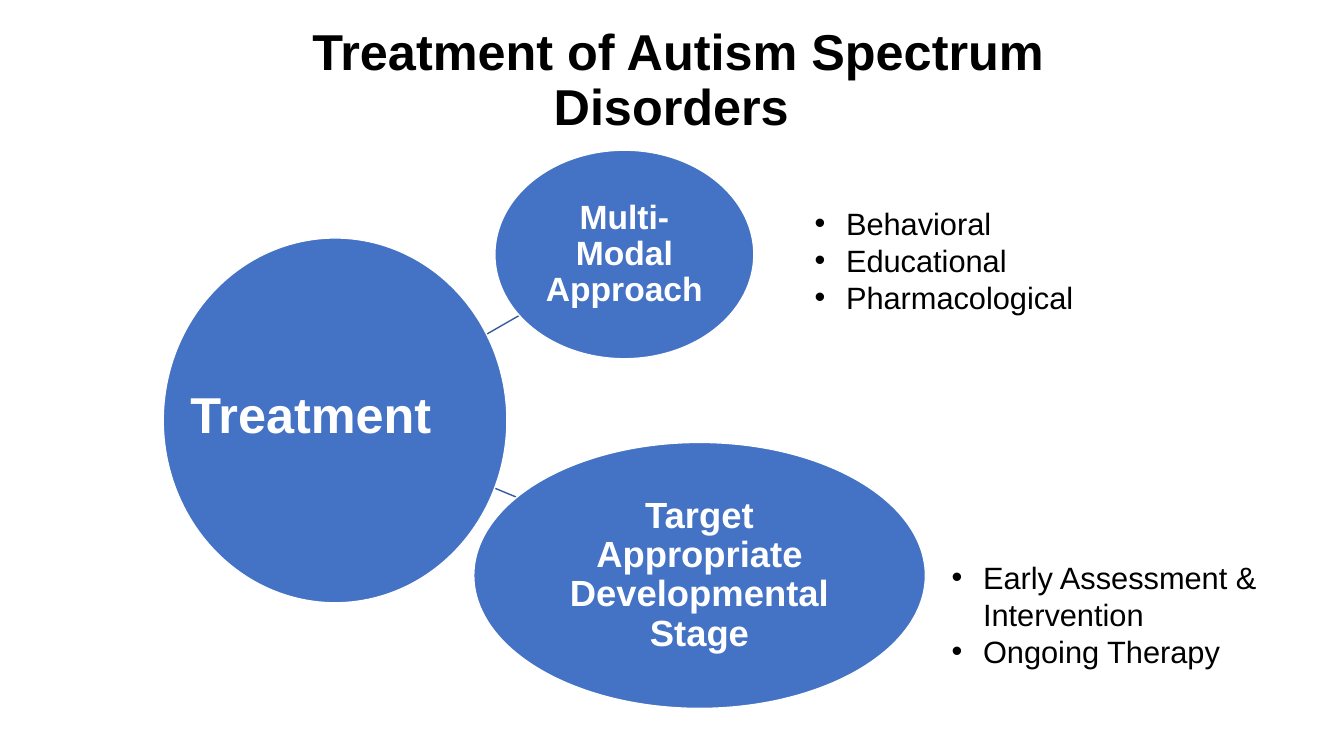
import pptx
import pptx.util
import pptx.dml.color
import pptx.enum.shapes
import pptx.enum.text
import pptx.oxml.ns
import lxml.etree

Pt = pptx.util.Pt
ALIGN = pptx.enum.text.PP_ALIGN
ANCHOR = pptx.enum.text.MSO_ANCHOR

# Content: boxes are left, top, width, height in points
TITLE = " Treatment of Autism Spectrum Disorders"
TITLE_BOX = (129, 15, 701, 87)
HUB = "Treatment"
HUB_BOX = (116.6, 170, 245.5, 260.6)
HUB_LABEL_BOX = (129, 270, 206.6, 51)
BRANCHES = [
    {"label": "Multi-Modal Approach", "size": 24,
     "box": (353.5, 107.3, 185, 149),
     "link": (323.3, 252.7, 370.8, 225.4),
     "points": ["Behavioral", "Educational", "Pharmacological"],
     "list_at": (574.6, 142.6)},
    {"label": "Target Appropriate Developmental Stage", "size": 26,
     "box": (338.4, 316, 322.6, 190),
     "link": (323.3, 336.2, 368.6, 355),
     "points": ["Early Assessment & Intervention", "Ongoing Therapy"],
     "list_at": (672.5, 395.3)},
]
LIST_SIZE = (244.8, 87)
THEME = {
    "font": "Arial", "ink": "000000", "light": "FFFFFF",
    "bubble": "4472C4", "link": "365B9D",
    "heading": 36, "list": 22, "line": 1, "bullet_indent": 22.5,
    "bubble_inset": 1.44, "tight": 0.9,
}


def color(role):
    return pptx.dml.color.RGBColor.from_string(THEME[role])


def place(shape, box):
    shape.left, shape.top, shape.width, shape.height = map(Pt, box)


def write(shape, lines, size, role, bold, align, anchor, spacing=1.0):
    frame = shape.text_frame
    frame.text = "\n".join(lines)
    frame.word_wrap = True
    frame.auto_size = pptx.enum.text.MSO_AUTO_SIZE.NONE
    frame.vertical_anchor = anchor
    for paragraph in frame.paragraphs:
        paragraph.alignment = align
        paragraph.line_spacing = spacing
        paragraph.space_before = paragraph.space_after = Pt(0)
        for run in paragraph.runs:
            run.font.name = THEME["font"]
            run.font.size = Pt(size)
            run.font.bold = bold
            run.font.color.rgb = color(role)


def add_bullets(shape):
    indent = Pt(THEME["bullet_indent"])
    for paragraph in shape.text_frame.paragraphs:
        properties = paragraph._p.get_or_add_pPr()
        properties.set("marL", str(indent))
        properties.set("indent", str(-indent))
        bullet = lxml.etree.SubElement(properties, pptx.oxml.ns.qn("a:buChar"))
        bullet.set("char", "•")


def add_link(shapes, ends):
    link = shapes.add_connector(
        pptx.enum.shapes.MSO_CONNECTOR.STRAIGHT, *map(Pt, ends))
    link.line.color.rgb = color("link")
    link.line.width = Pt(THEME["line"])
    lxml.etree.SubElement(link._element.spPr, pptx.oxml.ns.qn("a:effectLst"))


def add_bubble(shapes, box):
    bubble = shapes.add_shape(
        pptx.enum.shapes.MSO_SHAPE.OVAL, *map(Pt, box))
    bubble.shadow.inherit = False
    bubble.fill.solid()
    bubble.fill.fore_color.rgb = color("bubble")
    bubble.line.color.rgb = color("light")
    bubble.line.width = Pt(THEME["line"])
    return bubble


def main():
    deck = pptx.Presentation()
    deck.slide_width, deck.slide_height = Pt(960), Pt(540)
    slide = deck.slides.add_slide(deck.slide_layouts.get_by_name("Two Content"))
    shapes = slide.shapes
    title, *lists = list(slide.placeholders)[:3]

    # Title
    place(title, TITLE_BOX)
    write(title, [TITLE], THEME["heading"], "ink", True,
          ALIGN.CENTER, ANCHOR.MIDDLE, THEME["tight"])

    # Links lie behind the bubbles
    for branch in BRANCHES:
        add_link(shapes, branch["link"])

    # Hub with its label
    add_bubble(shapes, HUB_BOX)
    hub_label = shapes.add_textbox(*map(Pt, HUB_LABEL_BOX))

    # Branch bubbles and their lists
    for branch, points in zip(BRANCHES, lists):
        bubble = add_bubble(shapes, branch["box"])
        frame = bubble.text_frame
        frame.margin_left = frame.margin_right = Pt(THEME["bubble_inset"])
        frame.margin_top = frame.margin_bottom = Pt(THEME["bubble_inset"])
        write(bubble, [branch["label"]], branch["size"], "light", True,
              ALIGN.CENTER, ANCHOR.MIDDLE, THEME["tight"])
        place(points, branch["list_at"] + LIST_SIZE)
        write(points, branch["points"], THEME["list"], "ink", False,
              ALIGN.LEFT, ANCHOR.TOP)
        add_bullets(points)

    write(hub_label, [HUB], THEME["heading"], "light", True,
          ALIGN.LEFT, ANCHOR.TOP)
    deck.save("out.pptx")


if __name__ == "__main__":
    main()
